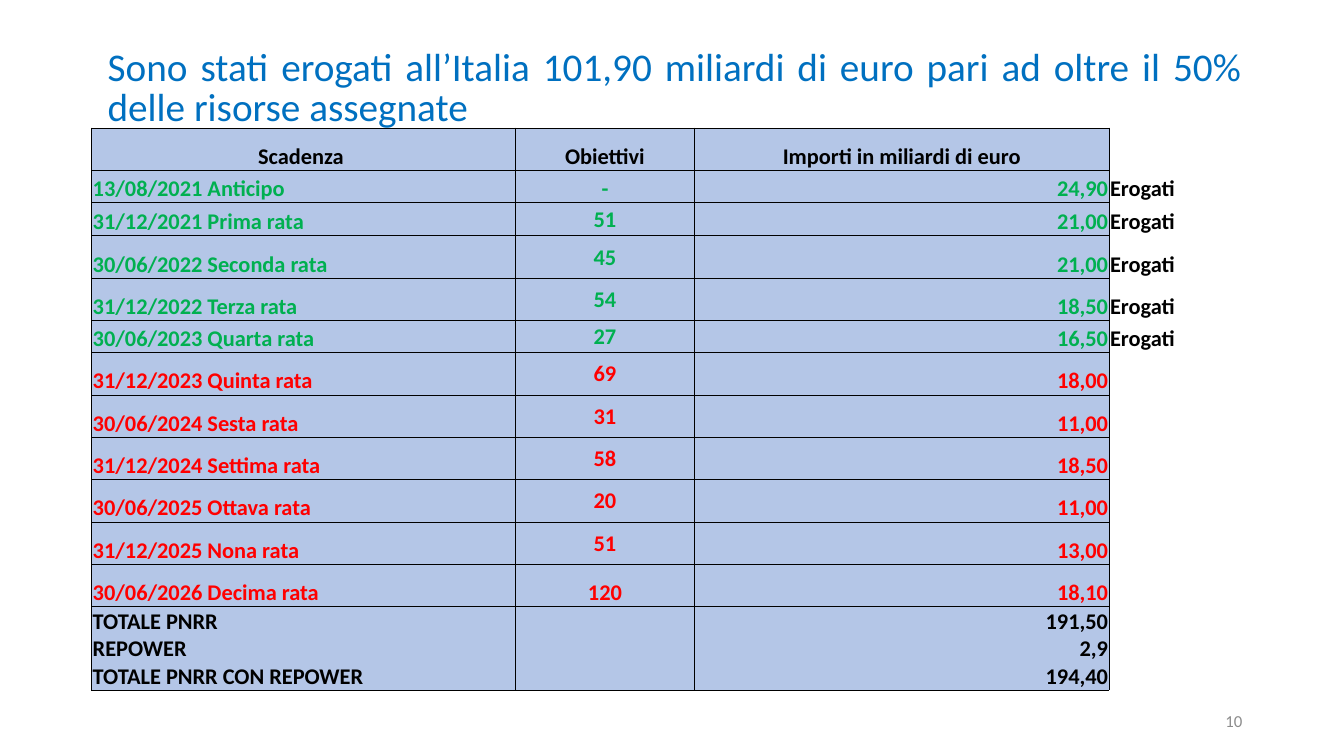
"""Build the slide listing the PNRR instalments paid out to Italy."""
from lxml import etree
from pptx import Presentation
from pptx.dml.color import RGBColor
from pptx.enum.text import MSO_ANCHOR, PP_ALIGN
from pptx.oxml.ns import qn
from pptx.util import Inches, Pt

LEFT, CENTER, RIGHT, JUSTIFY = PP_ALIGN.LEFT, PP_ALIGN.CENTER, PP_ALIGN.RIGHT, PP_ALIGN.JUSTIFY
TOP, MIDDLE, BOTTOM = MSO_ANCHOR.TOP, MSO_ANCHOR.MIDDLE, MSO_ANCHOR.BOTTOM

TITLE = "Sono stati erogati all’Italia 101,90 miliardi di euro pari ad oltre il 50% delle risorse assegnate"
PAGE_NUMBER = "10"
HEADINGS = ("Scadenza ", "Obiettivi", "Importi in miliardi di euro")
PAID_LABEL = "Erogati"
PAID = [
    ("13/08/2021 Anticipo", "-", "24,90", 0.32),
    ("31/12/2021 Prima rata", "51", "21,00", 0.33),
    ("30/06/2022 Seconda rata", "45", "21,00", 0.42),
    ("31/12/2022 Terza rata", "54", "18,50", 0.42),
    ("30/06/2023 Quarta rata", "27", "16,50", 0.32),
]
DUE = [
    ("31/12/2023 Quinta rata", "69", "18,00", 0.42),
    ("30/06/2024 Sesta rata", "31", "11,00", 0.42),
    ("31/12/2024 Settima rata", "58", "18,50", 0.42),
    ("30/06/2025 Ottava rata", "20", "11,00", 0.42),
    ("31/12/2025 Nona rata", "51", "13,00", 0.42),
    ("30/06/2026 Decima rata", "120", "18,10", 0.42),
]
TOTALS = [("TOTALE PNRR", "191,50"), ("REPOWER", "2,9"), ("TOTALE PNRR CON REPOWER", "194,40")]
BOTTOM_TARGETS = ("-", "120")

THEME = {
    "font": "Calibri", "title": "0070C0", "number": "8C8C8C", "ink": "000000",
    "paid": "00B050", "due": "FF0000", "cell": "B4C6E7",
    "title_size": 28, "table_size": 16, "number_size": 12, "border": 0.5,
}
COLUMN_WIDTHS = (4.2, 1.78, 4.11, 1.47)
HEADER_HEIGHT, TOTAL_HEIGHT = 0.42, 0.83
TABLE_LEFT, TABLE_TOP = 0.91, 1.27


def write(para, text, size, color, align, bold=False):
    para.alignment = align
    para.font.size = Pt(size)
    if text:
        span = para.add_run()
        span.text = text
        span.font.name = THEME["font"]
        span.font.size = Pt(size)
        span.font.bold = bold
        span.font.color.rgb = RGBColor.from_string(color)


def add_text(page, place, text, size, color, align, anchor):
    box = page.shapes.add_textbox(*map(Inches, place))
    box.text_frame.word_wrap = True
    box.text_frame.vertical_anchor = anchor
    para = box.text_frame.paragraphs[0]
    write(para, text, size, color, align)
    return para


def set_borders(cell, visible):
    properties = cell._tc.get_or_add_tcPr()
    for side in ("L", "R", "T", "B"):
        line = etree.SubElement(properties, qn(f"a:ln{side}"), w=str(Pt(THEME["border"])))
        if side in visible:
            fill = etree.SubElement(line, qn("a:solidFill"))
            etree.SubElement(fill, qn("a:srgbClr"), val=THEME["ink"])
        else:
            etree.SubElement(line, qn("a:noFill"))


def fill_cell(cell, lines, color, align, anchor, framed):
    cell.margin_left = cell.margin_right = cell.margin_top = Inches(0.01)
    cell.margin_bottom = 0
    cell.vertical_anchor = anchor
    set_borders(cell, "LRTB" if framed else "L")
    if framed:
        cell.fill.solid()
        cell.fill.fore_color.rgb = RGBColor.from_string(THEME["cell"])
    else:
        cell.fill.background()
    frame = cell.text_frame
    for index, line in enumerate(lines):
        para = frame.add_paragraph() if index else frame.paragraphs[0]
        write(para, line, THEME["table_size"], color, align, bold=True)


def table_rows():
    rows = [(HEADER_HEIGHT, "ink", [[heading] for heading in HEADINGS] + [[""]])]
    for group, color, label in ((PAID, "paid", PAID_LABEL), (DUE, "due", "")):
        for deadline, targets, amount, height in group:
            rows.append((height, color, [[deadline], [targets], [amount], [label]]))
    names, amounts = zip(*TOTALS)
    rows.append((TOTAL_HEIGHT, "ink", [names, [""], amounts, [""]]))
    return rows


def add_schedule(page):
    rows = table_rows()
    size = (sum(COLUMN_WIDTHS), sum(row[0] for row in rows))
    place = map(Inches, (TABLE_LEFT, TABLE_TOP, *size))
    table = page.shapes.add_table(len(rows), len(COLUMN_WIDTHS), *place).table
    table.first_row = table.horz_banding = False
    for column, width in zip(table.columns, COLUMN_WIDTHS):
        column.width = Inches(width)
    for index, (height, color, cells) in enumerate(rows):
        table.rows[index].height = Inches(height)
        aligns = (LEFT, CENTER, RIGHT, LEFT) if index else (CENTER,) * 4
        for column, lines in enumerate(cells):
            framed = column < len(HEADINGS)
            centered = index and column == 1 and lines[0] not in BOTTOM_TARGETS
            fill_cell(table.cell(index, column), lines, THEME[color if framed else "ink"],
                      aligns[column], MIDDLE if centered else BOTTOM, framed)


def main():
    deck = Presentation()
    deck.slide_width, deck.slide_height = Inches(13.33), Inches(7.5)
    page = deck.slides.add_slide(deck.slide_layouts[6])
    add_text(page, (9.42, 6.95, 3, 0.4), PAGE_NUMBER,
             THEME["number_size"], THEME["number"], RIGHT, MIDDLE)
    add_schedule(page)
    title = add_text(page, (0.97, 0.43, 11.44, 0.92), TITLE,
                     THEME["title_size"], THEME["title"], JUSTIFY, TOP)
    title.line_spacing = 0.87
    title.space_before, title.space_after = Pt(10), Pt(8)
    deck.save("out.pptx")


if __name__ == "__main__":
    main()
